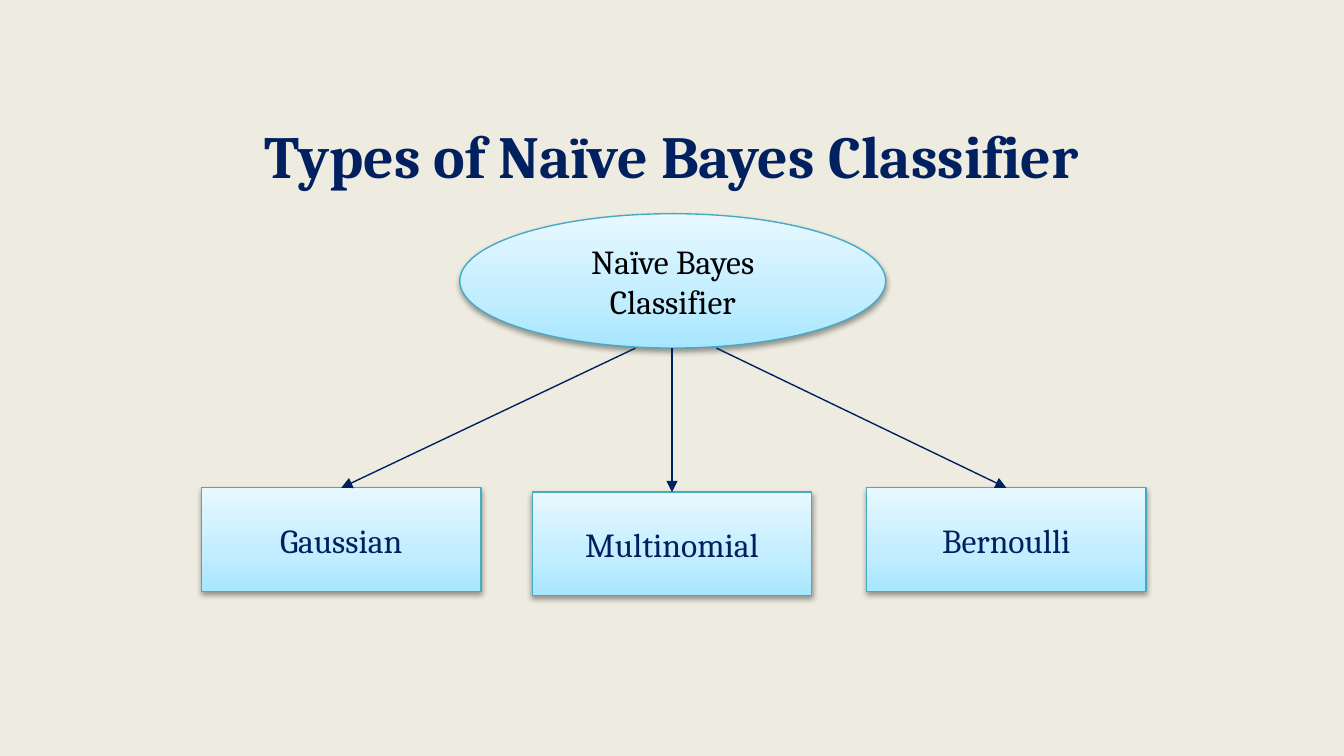
from pptx import Presentation
from pptx.dml.color import RGBColor
from pptx.enum.shapes import MSO_CONNECTOR, MSO_SHAPE
from pptx.enum.text import MSO_ANCHOR, PP_ALIGN
from pptx.oxml import parse_xml
from pptx.oxml.ns import nsdecls, qn
from pptx.util import Cm, Pt

ELLIPSE, RECTANGLE = MSO_SHAPE.OVAL, MSO_SHAPE.RECTANGLE
STRAIGHT = MSO_CONNECTOR.STRAIGHT
MIDDLE, CENTER = MSO_ANCHOR.MIDDLE, PP_ALIGN.CENTER

CREAM = RGBColor(0xEE, 0xEC, 0xE1)
NAVY = RGBColor(0x00, 0x20, 0x60)
BLACK = RGBColor(0x00, 0x00, 0x00)
TEAL = RGBColor(0x46, 0xAA, 0xC5)
# Gradient stops from bottom to top: percent and colour
SKY_STOPS = (
    (0, RGBColor(0xA7, 0xE6, 0xFF)),
    (35, RGBColor(0xC1, 0xED, 0xFF)),
    (100, RGBColor(0xE7, 0xF8, 0xFF)),
)
FONT = "Cambria"

SLIDE_WIDTH, SLIDE_HEIGHT = 25.4, 14.29
ROOT_LEFT, ROOT_TOP, ROOT_WIDTH, ROOT_HEIGHT = 8.69, 4.04, 8.05, 2.54
TYPE_WIDTH, TYPE_HEIGHT = 5.28, 1.96
# Label, box left, box top, arrow start, arrow weight
TYPES = (
    ("Gaussian", 3.81, 9.22, 12.01, 0.75),
    ("Bernoulli", 16.38, 9.22, 13.54, 0.75),
    ("Multinomial", 10.06, 9.3, 12.7, 1.5),
)


def write_text(shape, text, size, color, bold=False):
    frame = shape.text_frame
    frame.word_wrap = True
    frame.vertical_anchor = MIDDLE
    para = frame.paragraphs[0]
    para.text = text
    para.alignment = CENTER
    para.font.name = FONT
    para.font.size = Pt(size)
    para.font.bold = bold
    para.font.color.rgb = color


def fill_with_sky(shape):
    """Fill the shape with the three-stop vertical gradient."""
    stops = "".join(
        f'<a:gs pos="{percent * 1000}"><a:srgbClr val="{color}"/></a:gs>'
        for percent, color in SKY_STOPS
    )
    gradient = parse_xml(
        f'<a:gradFill {nsdecls("a")} rotWithShape="1"><a:gsLst>{stops}</a:gsLst>'
        '<a:lin ang="16200000" scaled="0"/></a:gradFill>'
    )
    shape.element.spPr.find(qn("a:prstGeom")).addnext(gradient)


def add_soft_shadow(shape):
    shape.shadow.inherit = False
    shape.element.spPr.find(qn("a:effectLst")).append(parse_xml(
        f'<a:outerShdw {nsdecls("a")} blurRad="{Pt(3.1)}" dist="{Pt(1.6)}" '
        'dir="5400000" rotWithShape="0"><a:srgbClr val="000000">'
        '<a:alpha val="38000"/></a:srgbClr></a:outerShdw>'
    ))


def add_node(page, kind, left, top, width, height, label, color):
    node = page.shapes.add_shape(kind, Cm(left), Cm(top), Cm(width), Cm(height))
    fill_with_sky(node)
    node.line.color.rgb = TEAL
    node.line.width = Pt(0.75)
    add_soft_shadow(node)
    write_text(node, label, 18, color)


def add_arrow(page, start_x, start_y, end_x, end_y, weight):
    arrow = page.shapes.add_connector(
        STRAIGHT, Cm(start_x), Cm(start_y), Cm(end_x), Cm(end_y))
    arrow.line.color.rgb = NAVY
    arrow.line.width = Pt(weight)
    arrow.line._get_or_add_ln().append(
        parse_xml(f'<a:tailEnd {nsdecls("a")} type="triangle"/>'))
    arrow.element.spPr.append(parse_xml(f'<a:effectLst {nsdecls("a")}/>'))


def add_title(page, text):
    box = page.shapes.add_textbox(0, Cm(2.08), Cm(SLIDE_WIDTH), Cm(1.68))
    write_text(box, text, 32, NAVY, bold=True)


def main():
    deck = Presentation()
    deck.slide_width, deck.slide_height = Cm(SLIDE_WIDTH), Cm(SLIDE_HEIGHT)
    page = deck.slides.add_slide(deck.slide_layouts[6])
    page.background.fill.solid()
    page.background.fill.fore_color.rgb = CREAM

    add_title(page, "Types of Naïve Bayes Classifier")
    add_node(page, ELLIPSE, ROOT_LEFT, ROOT_TOP, ROOT_WIDTH, ROOT_HEIGHT,
             "Naïve Bayes Classifier", BLACK)
    for label, left, top, start_x, weight in TYPES:
        add_node(page, RECTANGLE, left, top, TYPE_WIDTH, TYPE_HEIGHT, label, NAVY)
        add_arrow(page, start_x, ROOT_TOP + ROOT_HEIGHT,
                  left + TYPE_WIDTH / 2, top, weight)
    deck.save("out.pptx")


if __name__ == "__main__":
    main()
